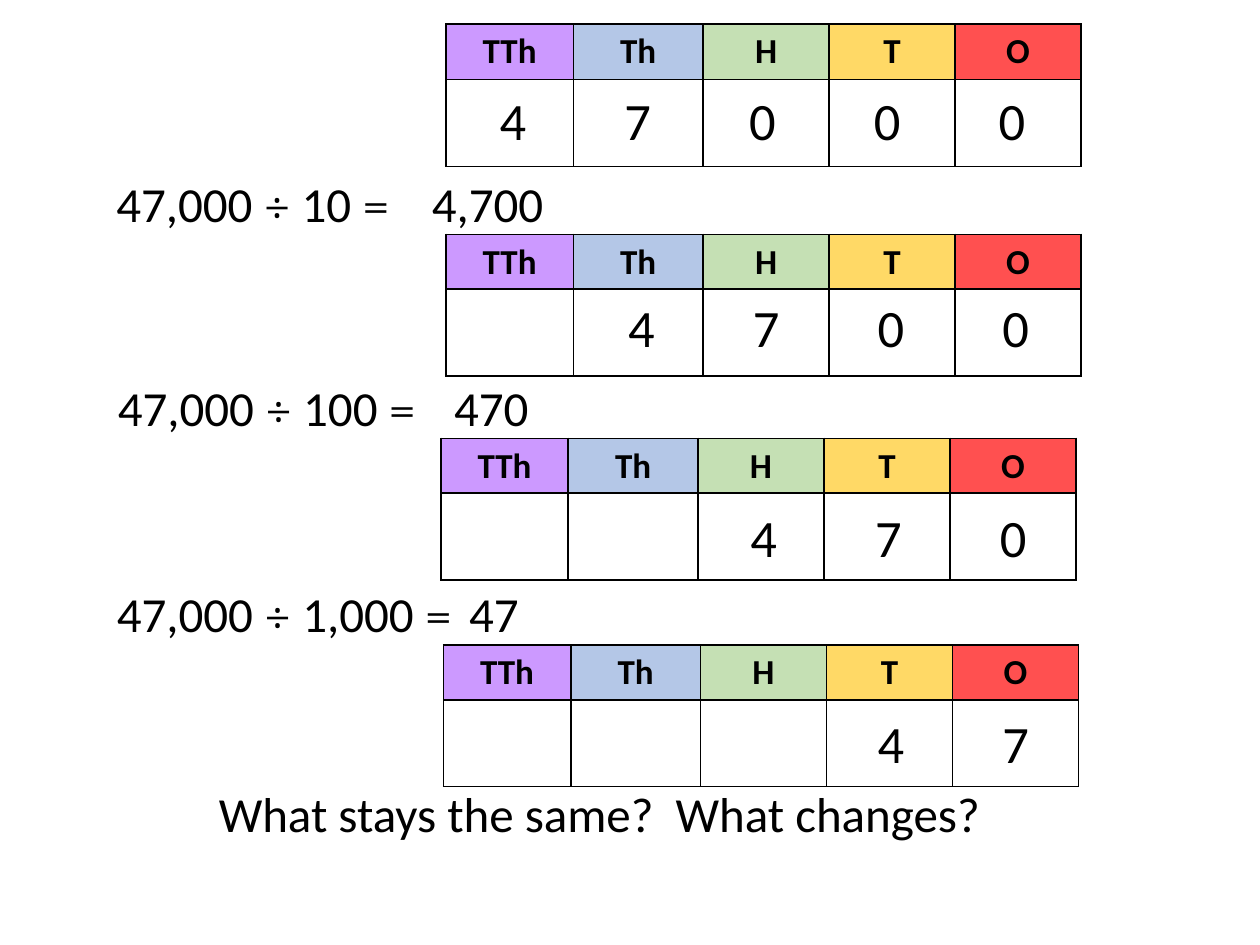
from dataclasses import dataclass

from lxml import etree
from pptx import Presentation
from pptx.dml.color import RGBColor
from pptx.enum.text import MSO_ANCHOR, MSO_AUTO_SIZE, PP_ALIGN
from pptx.oxml.ns import qn
from pptx.slide import Slide
from pptx.table import _Cell
from pptx.util import Pt

EMU_PER_PX = 9144  # 100 px to the inch
CENTER = PP_ALIGN.CENTER
MIDDLE = MSO_ANCHOR.MIDDLE
GROW = MSO_AUTO_SIZE.SHAPE_TO_FIT_TEXT
BLANK_LAYOUT = 6

TEXT_FONT, SYMBOL_FONT = "Calibri", "Cambria"
SYMBOLS = ("÷", "= ")
COLOURS = {
    "ink": "000000",
    "TTh": "CC99FF",
    "Th": "B4C7E7",
    "H": "C5E0B4",
    "T": "FFD966",
    "O": "FF5050",
}
PLACES = ("TTh", "Th", "H", "T", "O")
COLUMN_WIDTHS = (101, 103, 100, 100, 100)
HEADER_HEIGHT, BODY_HEIGHT = 43, 69
DIGIT_WIDTH, DIGIT_HEIGHT, DIGIT_STEP = 42, 61, 99
LINE_HEIGHT = 57


@dataclass(frozen=True)
class PlaceChart:
    left: int
    top: int
    digits: str
    digits_left: int
    digits_top: int


@dataclass(frozen=True)
class TextLine:
    left: int
    top: int
    width: int
    spans: tuple[str, ...]


CHARTS = (
    PlaceChart(354, 19, "47000", 386, 65),
    PlaceChart(354, 186, "4700", 488, 229),
    PlaceChart(350, 348, "470", 585, 396),
    PlaceChart(352, 512, "47", 686, 559),
)
LINES = (
    TextLine(75, 133, 260, ("47,000 ", "÷", " 10 ", "= ")),
    TextLine(332, 133, 110, ("4,700",)),
    TextLine(74, 295, 284, ("47,000 ", "÷", " 100 ", "= ")),
    TextLine(350, 295, 80, ("470",)),
    TextLine(73, 458, 314, ("47,000 ", "÷", " 1,000 ", "= ")),
    TextLine(362, 458, 60, ("47",)),
    TextLine(160, 617, 631, ("What stays the same?  What changes?",)),
)


def px(length: int) -> int:
    return length * EMU_PER_PX


def colour(name: str) -> RGBColor:
    return RGBColor.from_string(COLOURS[name])


def add_borders(cell: _Cell) -> None:
    properties = cell._tc.get_or_add_tcPr()
    for side in ("a:lnL", "a:lnR", "a:lnT", "a:lnB"):
        line = etree.SubElement(properties, qn(side), w=str(Pt(1)))
        fill = etree.SubElement(line, qn("a:solidFill"))
        etree.SubElement(fill, qn("a:srgbClr"), val=COLOURS["ink"])


def format_header(cell: _Cell, place: str) -> None:
    cell.fill.solid()
    cell.fill.fore_color.rgb = colour(place)
    cell.vertical_anchor = MIDDLE
    cell.text = place
    para = cell.text_frame.paragraphs[0]
    para.alignment = CENTER
    para.font.name = TEXT_FONT
    para.font.size = Pt(20)
    para.font.bold = True
    para.font.color.rgb = colour("ink")


def add_text(slide: Slide, line: TextLine, height: int, size: int) -> None:
    box = slide.shapes.add_textbox(
        px(line.left), px(line.top), px(line.width), px(height)
    )
    frame = box.text_frame
    frame.word_wrap = False
    frame.auto_size = GROW
    para = frame.paragraphs[0]
    para.alignment = CENTER
    para.font.size = Pt(size)
    para.font.color.rgb = colour("ink")
    for text in line.spans:
        span = para.add_run()
        span.text = text
        span.font.name = SYMBOL_FONT if text in SYMBOLS else TEXT_FONT


def add_place_table(slide: Slide, chart: PlaceChart) -> None:
    table = slide.shapes.add_table(
        2, len(PLACES), px(chart.left), px(chart.top),
        px(sum(COLUMN_WIDTHS)), px(HEADER_HEIGHT + BODY_HEIGHT),
    ).table
    table.first_row = False
    table.horz_banding = False
    for row, height in zip(table.rows, (HEADER_HEIGHT, BODY_HEIGHT)):
        row.height = px(height)
    for index, (place, width) in enumerate(zip(PLACES, COLUMN_WIDTHS)):
        table.columns[index].width = px(width)
        header, body = table.cell(0, index), table.cell(1, index)
        add_borders(header)
        add_borders(body)
        format_header(header, place)
        body.fill.background()


def add_digits(slide: Slide, chart: PlaceChart) -> None:
    for index, digit in enumerate(chart.digits):
        left = chart.digits_left + index * DIGIT_STEP
        line = TextLine(left, chart.digits_top, DIGIT_WIDTH, (digit,))
        add_text(slide, line, DIGIT_HEIGHT, 30)


def main() -> None:
    deck = Presentation()
    deck.slide_width, deck.slide_height = px(1000), px(750)
    slide = deck.slides.add_slide(deck.slide_layouts[BLANK_LAYOUT])
    for chart in CHARTS:
        add_place_table(slide, chart)
        add_digits(slide, chart)
    for line in LINES:
        add_text(slide, line, LINE_HEIGHT, 28)
    deck.save("out.pptx")


if __name__ == "__main__":
    main()
